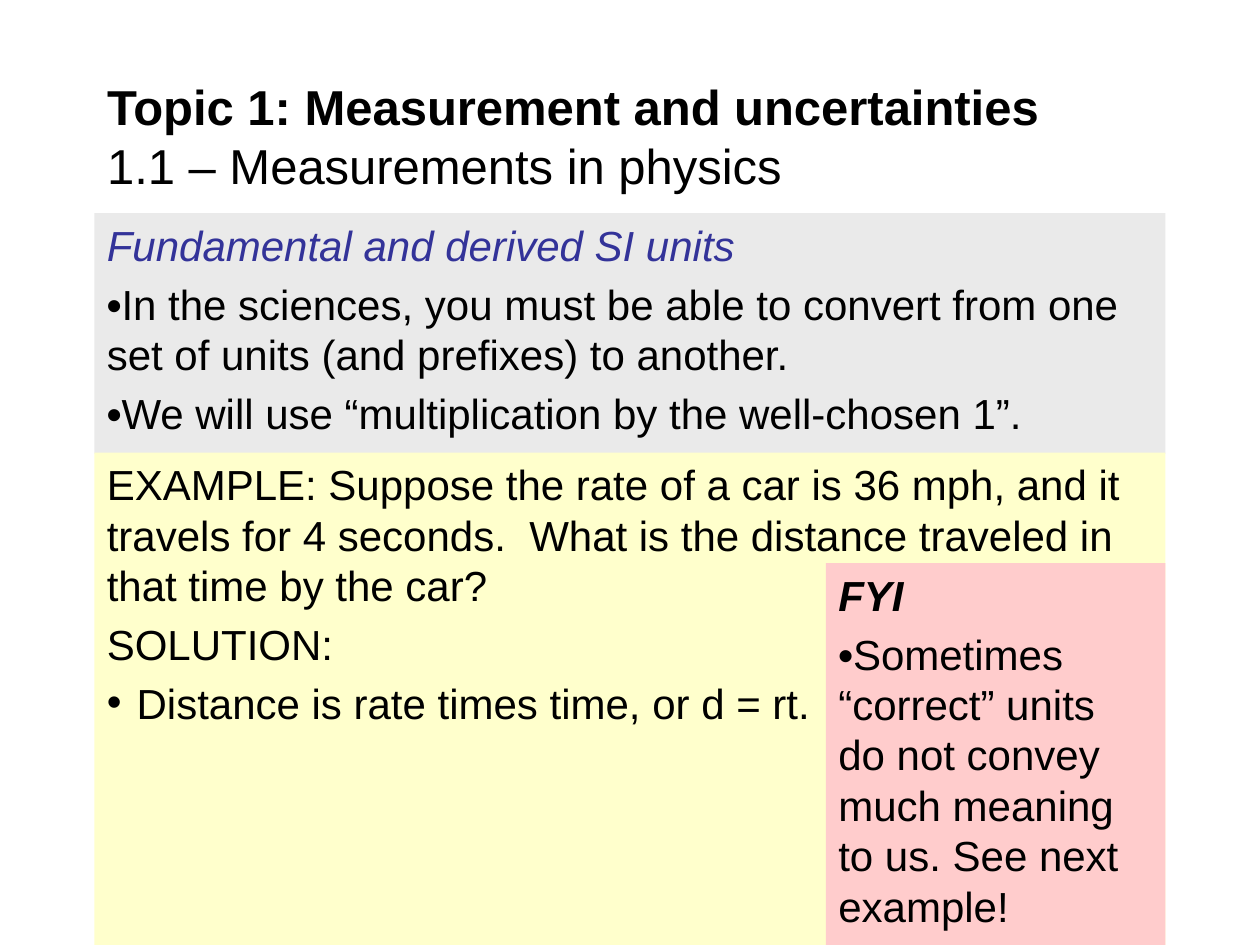
from lxml import etree
from pptx import Presentation
from pptx.dml.color import RGBColor
from pptx.enum.shapes import MSO_SHAPE
from pptx.enum.text import MSO_ANCHOR, PP_ALIGN
from pptx.oxml.ns import qn
from pptx.util import Pt

RECT = MSO_SHAPE.RECTANGLE
LEFT = PP_ALIGN.LEFT
TOP, MIDDLE = MSO_ANCHOR.TOP, MSO_ANCHOR.MIDDLE
BLACK = RGBColor(0x00, 0x00, 0x00)
BLUE = RGBColor(0x33, 0x33, 0x99)
GREY = RGBColor(0xEA, 0xEA, 0xEA)
YELLOW = RGBColor(0xFF, 0xFF, 0xCC)
PINK = RGBColor(0xFF, 0xCC, 0xCC)

WIDTH, HEIGHT = 720, 540
MARGIN = 54
RIGHT = WIDTH - MARGIN
SIZE, TITLE_SIZE = 24, 28
SPACE_BEFORE = 0.2 * SIZE
INDENT = 17

PLAIN = {}
BOLD = {"bold": True}
TOPIC = {"italic": True, "color": BLUE}
FYI = {"bold": True, "italic": True}
DOT = ("•", BOLD)

TITLE = [("Topic 1: Measurement and uncertainties", BOLD),
         ("1.1 – Measurements in physics", PLAIN)]

PANELS = [
    {"left": MARGIN, "top": 121.8, "bottom": 259.2, "fill": GREY, "paragraphs": [
        [("Fundamental and derived SI units", TOPIC)],
        [DOT, ("In the sciences, you must be able to convert from one "
               "set of units (and prefixes) to another.", PLAIN)],
        [DOT, ("We will use “multiplication by the well-chosen 1”.", PLAIN)],
    ]},
    {"left": MARGIN, "top": 258.6, "bottom": HEIGHT, "fill": YELLOW, "paragraphs": [
        [("EXAMPLE: Suppose the rate of a car is 36 mph, and it travels for "
          "4 seconds.  What is the distance traveled in that time by the car?", PLAIN)],
        [("SOLUTION:", PLAIN)],
        [("Distance is rate times time, or d = rt.", PLAIN)],
    ], "bulleted": [2]},
    {"left": 472, "top": 321.8, "bottom": HEIGHT, "fill": PINK, "paragraphs": [
        [("FYI", FYI)],
        [DOT, ("Sometimes “correct” units do not convey much meaning to us. "
               "See next example!", PLAIN)],
    ]},
]


def add_run(p, text, look, size):
    r = p.add_run()
    r.text = text
    font = {"name": "Arial", "size": Pt(size), "bold": False, "italic": False, **look}
    r.font.color.rgb = font.pop("color", BLACK)
    for key, value in font.items():
        setattr(r.font, key, value)


def add_bullet(p):
    pPr = p._p.get_or_add_pPr()
    pPr.set("marL", str(Pt(INDENT)))
    pPr.set("indent", str(-Pt(INDENT)))
    etree.SubElement(pPr, qn("a:buFont")).set("typeface", "Arial")
    etree.SubElement(pPr, qn("a:buChar")).set("char", "•")


def add_panel(s, panel):
    left, top = panel["left"], panel["top"]
    sp = s.shapes.add_shape(RECT, Pt(left), Pt(top),
                            Pt(RIGHT - left), Pt(panel["bottom"] - top))
    sp.shadow.inherit = False
    sp.fill.solid()
    sp.fill.fore_color.rgb = panel["fill"]
    sp.line.fill.background()
    tf = sp.text_frame
    tf.word_wrap = True
    tf.vertical_anchor = TOP
    for i, runs in enumerate(panel["paragraphs"]):
        p = tf.add_paragraph() if i else tf.paragraphs[0]
        p.alignment = LEFT
        p.space_before = Pt(SPACE_BEFORE)
        if i in panel.get("bulleted", []):
            add_bullet(p)
        for text, look in runs:
            add_run(p, text, look, SIZE)


def add_title(s):
    sp = s.shapes.title
    box = {"left": MARGIN, "top": 42, "width": RIGHT - MARGIN, "height": 70.5}
    for key, value in box.items():
        setattr(sp, key, Pt(value))
    tf = sp.text_frame
    tf.word_wrap = True
    tf.vertical_anchor = MIDDLE
    p = tf.paragraphs[0]
    p.alignment = LEFT
    for i, (text, look) in enumerate(TITLE):
        if i:
            p.add_line_break()
        add_run(p, text, look, TITLE_SIZE)


def main():
    prs = Presentation()
    prs.slide_width, prs.slide_height = Pt(WIDTH), Pt(HEIGHT)
    s = prs.slides.add_slide(prs.slide_layouts[5])
    add_title(s)
    for panel in PANELS:
        add_panel(s, panel)
    prs.save("out.pptx")


if __name__ == "__main__":
    main()
